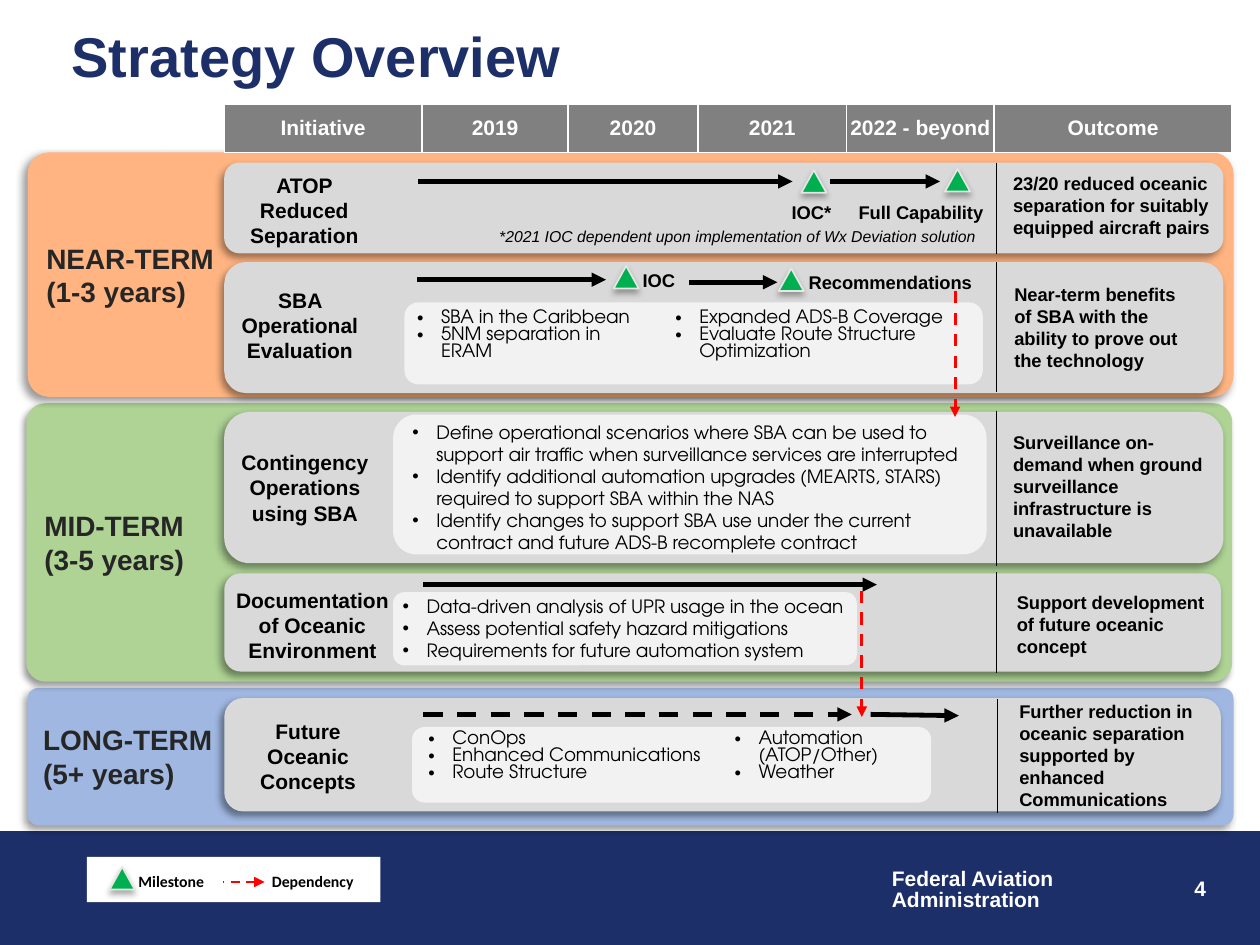
from dataclasses import dataclass
from typing import NamedTuple, Optional

from lxml import etree
from pptx import Presentation
from pptx import util as u
from pptx.dml.color import RGBColor
from pptx.enum import dml, shapes, text
from pptx.oxml.ns import qn

IN = u.Inches
KIND = shapes.MSO_SHAPE
LEFT, MID, RIGHT = text.PP_ALIGN.LEFT, text.PP_ALIGN.CENTER, text.PP_ALIGN.RIGHT
TOP, CENTER = text.MSO_ANCHOR.TOP, text.MSO_ANCHOR.MIDDLE
PAD, SLIM, NONE = (0.1, 0.05, 0.1, 0.05), (0.05, 0, 0, 0), (0, 0, 0, 0)


@dataclass(frozen=True)
class Theme:
    navy: str = "1D2F68"
    white: str = "FFFFFF"
    black: str = "000000"
    dark: str = "262626"
    head: str = "808080"
    row: str = "D9D9D9"
    box: str = "F2F2F2"
    green: str = "00B050"
    edge: str = "E7E6E6"
    red: str = "FF0000"
    title: float = 32
    band: float = 16
    name: float = 12
    body: float = 10.5
    small: float = 9
    sans: str = "Arial"
    round: str = "TeX Gyre Adventor"
    legend: str = "Calibri"


T = Theme()


class Style(NamedTuple):
    size: float
    color: str = T.black
    font: str = T.sans
    bold: bool = True
    italic: bool = False
    align: text.PP_ALIGN = LEFT
    gap: Optional[float] = None
    bullet: bool = False


class Box(NamedTuple):
    x: float
    y: float
    w: float
    h: float


class Band(NamedTuple):
    box: Box
    color: str
    adj: float
    lines: list


class Row(NamedTuple):
    box: Box
    name: str
    label: Box
    goal: str
    out: Box
    rule: tuple  # x, top, bottom


class Arrow(NamedTuple):
    ends: tuple
    color: str = T.black
    width: float = 2.75
    dash: bool = False
    tip: str = "a:tailEnd"


class Panel(NamedTuple):
    box: Box
    cols: list
    cells: list


LABEL = Style(T.body)
NAME = Style(T.name, align=MID)
HEAD = Style(T.name, T.white, align=MID)
LIST = Style(T.body, font=T.round, bold=False, bullet=True)
KEY = Style(T.small, font=T.legend)
SOFT, DROP = (40, 4, 3, 135), (32, 3.5, 2.2, 90)  # alpha, blur, distance, angle

BANDS = [
    Band(Box(0.22, 5.46, 9.57, 1.09), "9FB7E1", 0.078, ["LONG-TERM", "(5+ years)"]),
    Band(Box(0.21, 3.2, 9.57, 2.21), "AED395", 0.068, ["MID-TERM", "(3-5 years)"]),
    Band(Box(0.22, 1.21, 9.57, 1.94), "FFB481", 0.088, ["NEAR-TERM", "(1-3 years)"]),
]
ROWS = [
    Row(Box(1.78, 1.29, 7.93, 0.72), "ATOP Reduced Separation", Box(1.77, 1.32, 1.29, 0.71),
        "23/20 reduced oceanic separation for suitably equipped aircraft pairs",
        Box(7.99, 1.37, 1.7, 0.53), (7.91, 1.29, 2.02)),
    Row(Box(1.78, 2.08, 7.93, 1.04), "SBA Operational Evaluation", Box(1.77, 2.23, 1.22, 0.71),
        "Near-term benefits of SBA with the ability to prove out the technology",
        Box(8, 2.25, 1.49, 0.71), (7.91, 2.08, 3.11)),
    Row(Box(1.78, 3.27, 7.93, 1.2), "Contingency Operations using SBA", Box(1.76, 3.52, 1.32, 0.71),
        "Surveillance on-demand when ground surveillance infrastructure is unavailable",
        Box(7.99, 3.42, 1.58, 0.88), (7.91, 3.26, 4.49)),
    Row(Box(1.78, 4.55, 7.91, 0.78), "Documentation of Oceanic Environment", Box(1.7, 4.61, 1.56, 0.71),
        "Support development of future oceanic concept",
        Box(8.02, 4.69, 1.66, 0.53), (7.91, 4.54, 5.34)),
    Row(Box(1.78, 5.54, 7.91, 0.9), "Future Oceanic Concepts", Box(1.77, 5.65, 1.35, 0.71),
        "Further reduction in oceanic separation supported by enhanced Communications",
        Box(8.04, 5.56, 1.55, 0.88), (7.92, 5.55, 6.45)),
]
PLANS = [
    (Box(3.12, 4.7, 3.68, 0.58), 0.149, SLIM,
     ["Data-driven analysis of UPR usage in the ocean", "Assess potential safety hazard mitigations",
      "Requirements for future automation system"]),
    (Box(3.12, 3.29, 4.71, 1.11), None, (0.1, 0, 0.1, 0),
     ["Define operational scenarios where SBA can be used to support air traffic when "
      "surveillance services are interrupted",
      "Identify additional automation upgrades (MEARTS, STARS) required to support SBA within the NAS",
      "Identify changes to support SBA use under the current contract and future ADS-B recomplete contract"]),
    (Box(3.27, 5.77, 4.12, 0.6), None, PAD, []),
    (Box(3.21, 2.4, 4.59, 0.65), None, PAD, []),
]
PANELS = [
    Panel(Box(3.3, 5.75, 4.26, 0.41), [2.43, 1.83],
          [["ConOps", "Enhanced Communications", "Route Structure"], ["Automation (ATOP/Other)", "Weather"]]),
    Panel(Box(3.21, 2.41, 4.53, 0.41), [2.05, 2.48],
          [["SBA in the Caribbean", "5NM separation in ERAM"],
           ["Expanded ADS-B Coverage", "Evaluate Route Structure Optimization"]]),
]
HEADER = Panel(Box(1.78, 0.83, 8.01, 0.38), [1.57, 1.16, 1.03, 1.18, 1.17, 1.89],
               [["Initiative"], ["2019"], ["2020"], ["2021"], ["2022 - beyond"], ["Outcome"]])
ARROWS = [
    Arrow((3.32, 1.44, 6.29, 1.44)), Arrow((6.59, 1.44, 7.46, 1.44)),
    Arrow((3.31, 2.22, 4.81, 2.22)), Arrow((5.47, 2.24, 6.17, 2.24)),
    Arrow((3.36, 4.64, 6.96, 4.64)), Arrow((6.91, 5.67, 7.61, 5.68)),
    Arrow((3.36, 5.67, 6.76, 5.67), dash=True),
    Arrow((6.84, 4.69, 6.84, 5.69), T.red, 1.75, True),
    Arrow((7.58, 2.31, 7.58, 3.31), T.red, 1.75, True),
    Arrow((2.1, 7, 1.77, 7), T.red, 1.25, True, "a:headEnd"),
]
STONES = [(7.5, 1.34), (6.36, 1.35), (4.87, 2.11), (6.18, 2.13), (0.87, 6.88)]
NOTES = [
    (Box(6.61, 1.55, 1.4, 0.28), "Full Capability", LABEL._replace(align=MID)),
    (Box(6.04, 1.55, 0.8, 0.28), "IOC*", LABEL._replace(align=MID)),
    (Box(4.83, 2.09, 0.8, 0.28), "IOC", LABEL._replace(align=MID)),
    (Box(6.32, 2.1, 1.76, 0.28), "Recommendations", LABEL),
    (Box(2.84, 1.75, 5, 0.25), "*2021 IOC dependent upon implementation of Wx Deviation solution",
     Style(T.small, bold=False, italic=True, align=RIGHT)),
    (Box(1, 6.87, 0.98, 0.25), "Milestone", KEY),
    (Box(2.06, 6.87, 0.87, 0.25), "Dependency", KEY),
]


def rgb(color: str) -> RGBColor:
    return RGBColor.from_string(color)


def add(node, tag: str, **attrs):
    return etree.SubElement(node, qn(tag), {k: str(v) for k, v in attrs.items()})


def write(frame, lines: list, style: Style) -> None:
    for i, line in enumerate(lines):
        para = frame.paragraphs[0] if i == 0 else frame.add_paragraph()
        para.text, para.alignment = line, style.align
        if style.bullet:
            props = para._p.get_or_add_pPr()
            props.set("marL", str(IN(0.19)))
            props.set("indent", str(IN(-0.19)))
            add(props, "a:buFont", typeface=T.sans)
            add(props, "a:buChar", char="•")
        if style.gap:
            para.line_spacing = style.gap
        font = para.font
        font.size, font.name = u.Pt(style.size), style.font
        font.bold, font.italic = style.bold, style.italic
        font.color.rgb = rgb(style.color)


def fit(frame, pad: tuple, anchor, wrap: bool = True) -> None:
    frame.word_wrap, frame.vertical_anchor = wrap, anchor
    (frame.margin_left, frame.margin_top,
     frame.margin_right, frame.margin_bottom) = map(IN, pad)


def label(slide, box: Box, lines: list, style: Style, pad=PAD, anchor=TOP, wrap=True) -> None:
    frame = slide.shapes.add_textbox(*map(IN, box)).text_frame
    fit(frame, pad, anchor, wrap)
    write(frame, lines, style)


def block(slide, kind, box: Box, fill: str, shade=None, adj=None, edge=None):
    shape = slide.shapes.add_shape(kind, *map(IN, box))
    shape.shadow.inherit = False
    shape.fill.solid()
    shape.fill.fore_color.rgb = rgb(fill)
    if edge:
        shape.line.color.rgb, shape.line.width = rgb(edge), u.Pt(1)
    else:
        shape.line.fill.background()
    if adj is not None:
        shape.adjustments[0] = adj
    if shade:
        alpha, blur, dist, angle = shade
        glow = add(shape._element.spPr.find(qn("a:effectLst")), "a:outerShdw", blurRad=u.Pt(blur),
                   dist=u.Pt(dist), dir=angle * 60000, algn="ctr", rotWithShape=0)
        add(add(glow, "a:srgbClr", val=T.black), "a:alpha", val=alpha * 1000)
    return shape


def stroke(slide, arrow: Arrow) -> None:
    line = slide.shapes.add_connector(shapes.MSO_CONNECTOR.STRAIGHT, *map(IN, arrow.ends))
    line.line.color.rgb, line.line.width = rgb(arrow.color), u.Pt(arrow.width)
    if arrow.dash:
        line.line.dash_style = dml.MSO_LINE.DASH
    if arrow.tip:
        add(line.line._get_or_add_ln(), arrow.tip, type="triangle")
    add(line._element.spPr, "a:effectLst")


def grid(slide, panel: Panel, style: Style, pad=PAD, anchor=TOP, fill=None, edge=None) -> None:
    table = slide.shapes.add_table(1, len(panel.cols), *map(IN, panel.box)).table
    table.first_row = table.horz_banding = False
    for col, width, cell, lines in zip(table.columns, panel.cols, table.rows[0].cells, panel.cells):
        col.width = IN(width)
        props = cell._tc.get_or_add_tcPr()
        for side in ("a:lnL", "a:lnR", "a:lnT", "a:lnB"):
            line = add(props, side, w=u.Pt(1))
            if edge:
                add(add(line, "a:solidFill"), "a:srgbClr", val=edge)
            else:
                add(line, "a:noFill")
        if fill:
            cell.fill.solid()
            cell.fill.fore_color.rgb = rgb(fill)
        else:
            cell.fill.background()
        (cell.margin_left, cell.margin_top, cell.margin_right, cell.margin_bottom) = map(IN, pad)
        cell.vertical_anchor = anchor
        write(cell.text_frame, lines, style)


def main() -> None:
    deck = Presentation()
    deck.slide_width, deck.slide_height = IN(10), IN(7.5)
    slide = deck.slides.add_slide(deck.slide_layouts[6])

    # Title and footer
    block(slide, KIND.RECTANGLE, Box(0, 6.6, 10, 0.89), T.navy, edge=T.navy)
    label(slide, Box(7.59, 6.9, 2.08, 0.5), ["4"], HEAD._replace(align=RIGHT))
    label(slide, Box(6.98, 6.85, 1.5, 0.44), ["Federal Aviation", "Administration"],
          HEAD._replace(align=LEFT, gap=0.85), wrap=False)
    label(slide, Box(0.47, 0.1, 9.27, 0.67), ["Strategy Overview"], Style(T.title, T.navy), anchor=CENTER)
    block(slide, KIND.RECTANGLE, Box(0.69, 6.8, 2.33, 0.36), T.white)

    # Time bands, initiative rows and plan boxes
    for band in BANDS:
        shape = block(slide, KIND.ROUNDED_RECTANGLE, band.box, band.color, SOFT, band.adj)
        fit(shape.text_frame, PAD, CENTER)
        write(shape.text_frame, band.lines, Style(T.band, T.dark))
    for row in ROWS:
        block(slide, KIND.ROUNDED_RECTANGLE, row.box, T.row, SOFT)
    for box, adj, pad, lines in PLANS:
        shape = block(slide, KIND.ROUNDED_RECTANGLE, box, T.box, adj=adj)
        fit(shape.text_frame, pad, TOP)
        write(shape.text_frame, lines, LIST)

    # Tables
    grid(slide, HEADER, HEAD, NONE, CENTER, T.head, T.white)
    for panel in PANELS:
        grid(slide, panel, LIST)

    # Names, outcomes and dividers
    for row in ROWS:
        label(slide, row.label, [row.name], NAME)
        label(slide, row.out, [row.goal], LABEL, SLIM)
        x, top, base = row.rule
        stroke(slide, Arrow((x, top, x, base), width=0.5, tip=""))

    # Timeline arrows, milestones and notes
    for arrow in ARROWS:
        stroke(slide, arrow)
    for x, y in STONES:
        block(slide, KIND.FLOWCHART_EXTRACT, Box(x, y, 0.2, 0.18), T.green, DROP, edge=T.edge)
    for box, line, style in NOTES:
        label(slide, box, [line], style)

    deck.save("out.pptx")


if __name__ == "__main__":
    main()
